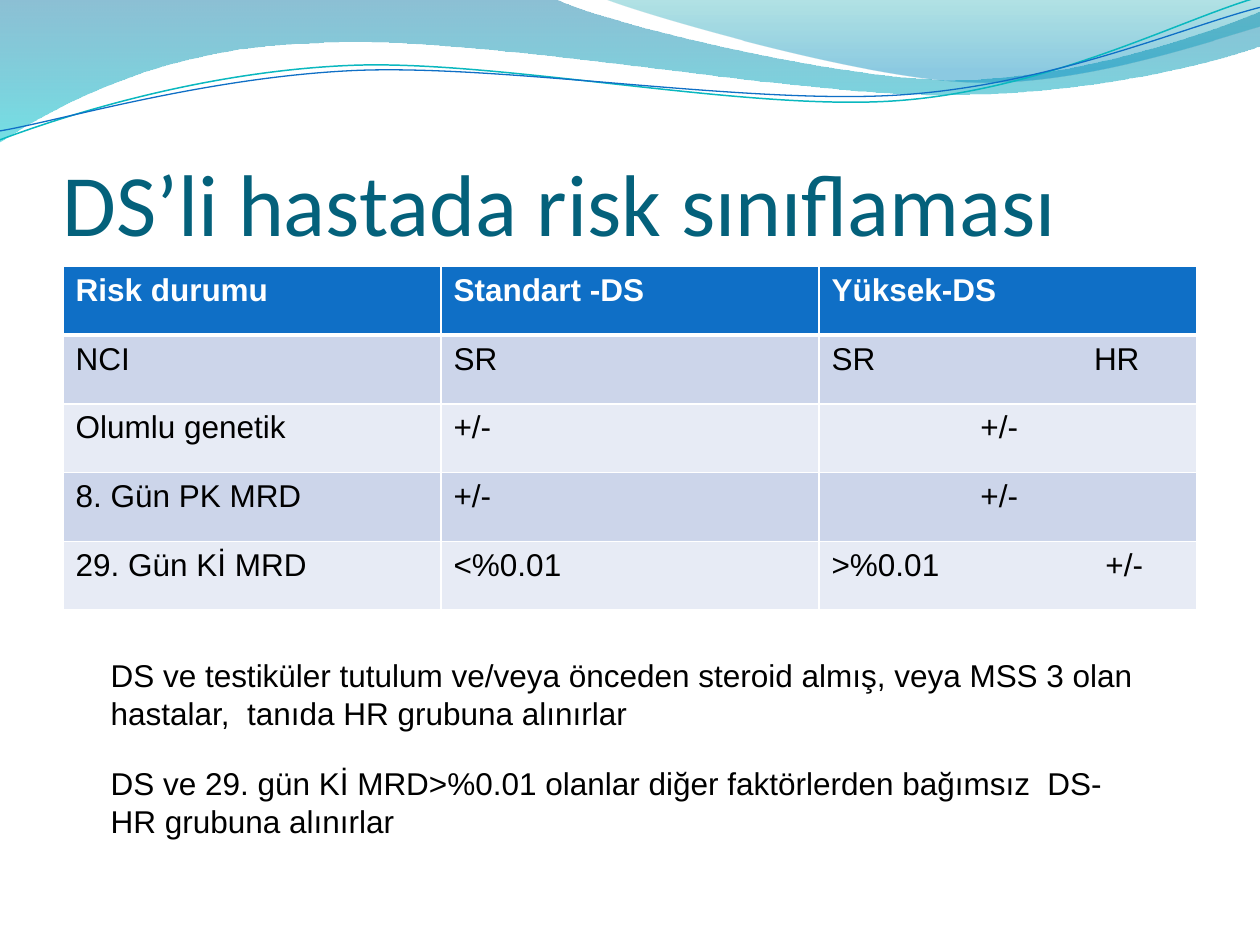
from lxml.etree import SubElement
from pptx import Presentation
from pptx.dml.color import RGBColor
from pptx.enum.text import MSO_ANCHOR, MSO_AUTO_SIZE
from pptx.oxml.ns import qn
from pptx.util import Cm, Pt

codes = {
    "title": "04617B", "head": "0F6FC6", "odd": "CCD5EA", "even": "E7EBF5",
    "white": "FFFFFF", "black": "000000", "teal": "0AB8BF",
    "deep": "0074A1", "aqua": "00C6CF", "sea": "00A1A9", "sky": "008BBF",
}
hues = {name: RGBColor.from_string(code) for name, code in codes.items()}

deck = Presentation()
deck.slide_width, deck.slide_height = Cm(25.4), Cm(19.05)
slide = deck.slides.add_slide(deck.slide_layouts[6])


def draw(start, moves, close):
    pts = [(Cm(x), Cm(y)) for move in moves for x, y in zip(move[::2], move[1::2])]
    form = slide.shapes.build_freeform(Cm(start[0]), Cm(start[1]), scale=1.0)
    form.add_line_segments(pts, close=close)
    shape = form.convert_to_shape()
    shape.shadow.inherit = False
    legs = iter(list(shape.element.iter(qn("a:lnTo"))))
    for move in moves:
        leg = next(legs)
        if len(move) == 6:
            curve = leg.makeelement(qn("a:cubicBezTo"))
            leg.addprevious(curve)
            for part in (leg, next(legs), next(legs)):
                curve.append(part[0])
                part.getparent().remove(part)
    return shape


def write(para, text, size, hue, face="Arial", bold=False):
    para.text = text
    font = para.font
    font.size, font.name, font.bold = Pt(size), face, bold
    font.color.rgb = hues[hue]


waves = [
    ((0, 0), [
        (11.18, -0.03),
        (12.09, 0.43, 16.87, 1.6, 19.25, 1.6),
        (21.67, 1.6, 24.33, 0.66, 25.4, 0.23),
        (25.43, 0.91),
        (24.97, 1.12, 22.1, 1.93, 18.95, 1.91),
        (15.8, 1.91, 9.7, 0.71, 6.53, 0.86),
        (3.28, 0.91, 1.17, 2.11, -0.03, 2.87),
        (0, 0),
    ], [(0, "deep", 45), (1, "aqua", 55)]),
    ((12.17, -0.03), [
        (12.93, 0.28, 17.32, 1.57, 19.53, 1.65),
        (21.74, 1.75, 24.41, 0.81, 25.4, 0.53),
        (25.4, 0),
        (12.17, -0.03),
    ], [(0, "sea", 30), (0.8, "sky", 45)]),
]
for start, moves, stops in waves:
    wave = draw(start, moves, True)
    wave.line.fill.background()
    wave.fill.gradient()
    wave.fill.gradient_angle = 270
    for stop, (place, hue, alpha) in zip(wave.fill.gradient_stops, stops):
        stop.position = place
        stop.color.rgb = hues[hue]
    tints = wave.element.spPr.iter(qn("a:srgbClr"))
    for tint, (place, hue, alpha) in zip(tints, stops):
        SubElement(tint, qn("a:alpha"), val=str(alpha * 1000))

lines = [
    ((0, 2.82), [
        (1.22, 2.36, 4.01, 1.45, 7.04, 1.32),
        (10.03, 1.19, 15.06, 2.26, 18.11, 2.03),
        (21.16, 1.8, 23.83, 0.38, 25.35, -0.05),
    ], "teal", 0.85),
    ((0, 2.64), [
        (1.19, 2.44, 4.17, 1.55, 7.19, 1.42),
        (10.24, 1.3, 15.16, 2.13, 18.21, 1.91),
        (21.23, 1.7, 23.9, 0.53, 25.4, 0.15),
    ], "head", 0.75),
]
for start, moves, hue, width in lines:
    line = draw(start, moves, False)
    line.fill.background()
    line.line.color.rgb = hues[hue]
    line.line.width = Pt(width)

title = slide.shapes.add_textbox(Cm(1.27), Cm(1.95), Cm(22.86), Cm(3.18)).text_frame
title.word_wrap = True
title.vertical_anchor = MSO_ANCHOR.BOTTOM
title.margin_left = title.margin_right = title.margin_bottom = 0
write(title.paragraphs[0], "DS’li hastada risk sınıflaması", 50, "title", "Calibri")

rows = [
    ("Risk durumu", "Standart -DS", "Yüksek-DS"),
    ("NCI", "SR", "SR\tHR"),
    ("Olumlu genetik", "+/-", "+/-"),
    ("8. Gün PK MRD", "+/-", "+/-"),
    ("29. Gün Kİ MRD", "<%0.01", ">%0.01\t+/-"),
]
tabs = {1: 5.29, 4: 5.52}
edges = [("a:lnL", 1), ("a:lnR", 1), ("a:lnT", 1), ("a:lnB", 3)]
table = slide.shapes.add_table(5, 3, Cm(1.27), Cm(5.37), Cm(22.86), Cm(6.93)).table
for r, row in enumerate(rows):
    for c, text in enumerate(row):
        cell = table.cell(r, c)
        cell.fill.solid()
        cell.fill.fore_color.rgb = hues["head" if r == 0 else "odd" if r % 2 else "even"]
        para = cell.text_frame.paragraphs[0]
        write(para, text, 18, "white" if r == 0 else "black", bold=r == 0)
        props = para._p.get_or_add_pPr()
        if r == 0:
            frame = cell._tc.get_or_add_tcPr()
            for spot, (tag, width) in enumerate(edges):
                edge = frame.makeelement(qn(tag), w=str(Pt(width)))
                ink = SubElement(edge, qn("a:solidFill"))
                SubElement(ink, qn("a:srgbClr"), val=codes["white"])
                frame.insert(spot, edge)
        elif "\t" in text:
            stops = props.makeelement(qn("a:tabLst"))
            SubElement(stops, qn("a:tab"), pos=str(Cm(tabs[r])), algn="l")
            props.insert(0, stops)
        elif c == 2:
            props.set("marL", str(Cm(3)))

notes = [
    (13.11, 21.64, "DS ve testiküler tutulum ve/veya önceden steroid almış, veya MSS 3 olan hastalar,  tanıda HR grubuna alınırlar"),
    (15.28, 21.23, "DS ve 29. gün Kİ MRD>%0.01 olanlar diğer faktörlerden bağımsız  DS-HR grubuna alınırlar"),
]
for top, width, text in notes:
    frame = slide.shapes.add_textbox(Cm(1.98), Cm(top), Cm(width), Cm(1.8)).text_frame
    frame.word_wrap = True
    frame.auto_size = MSO_AUTO_SIZE.SHAPE_TO_FIT_TEXT
    write(frame.paragraphs[0], text, 18, "black")

deck.save("out.pptx")
